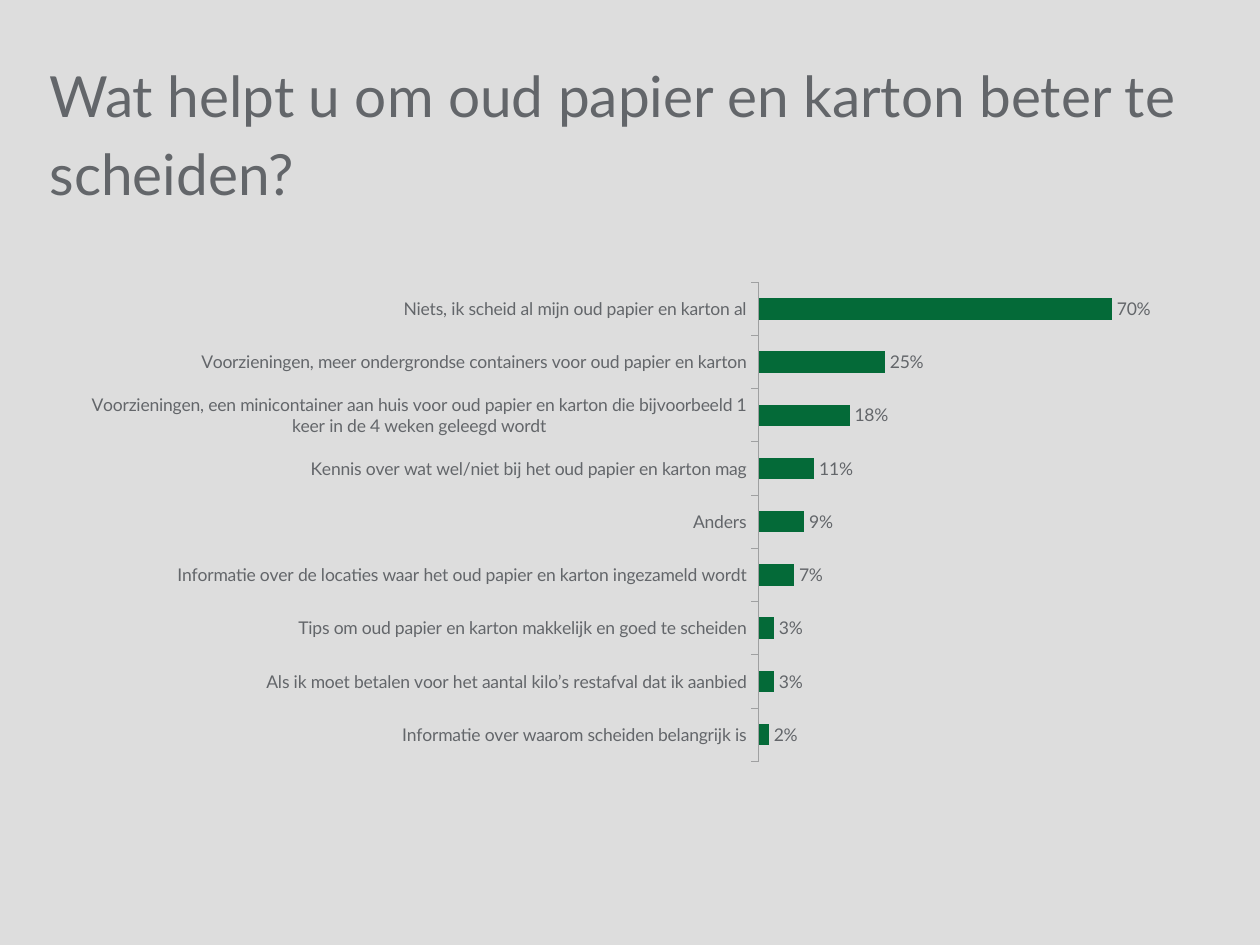
from lxml import etree
from pptx import Presentation
from pptx.chart.data import CategoryChartData
from pptx.dml.color import RGBColor
from pptx.enum.chart import XL_CHART_TYPE, XL_LABEL_POSITION, XL_TICK_LABEL_POSITION, XL_TICK_MARK
from pptx.enum.text import MSO_ANCHOR, MSO_AUTO_SIZE, PP_ALIGN
from pptx.oxml.ns import qn
from pptx.util import Cm, Pt

BAR_CLUSTERED = XL_CHART_TYPE.BAR_CLUSTERED
OUTSIDE_END = XL_LABEL_POSITION.OUTSIDE_END
LABELS_LOW = XL_TICK_LABEL_POSITION.LOW
TICK_OUTSIDE, TICK_NONE = XL_TICK_MARK.OUTSIDE, XL_TICK_MARK.NONE
TOP, LEFT, NO_AUTOFIT = MSO_ANCHOR.TOP, PP_ALIGN.LEFT, MSO_AUTO_SIZE.NONE

BACKGROUND, TEXT, BAR, AXIS = "DDDDDD", "63666A", "046A38", "9FA0A1"
TYPEFACE = "Lato"
QUESTION = "Wat helpt u om oud papier en karton beter te scheiden?"
ANSWERS = {
    "Niets, ik scheid al mijn oud papier en karton al": 0.70,
    "Voorzieningen, meer ondergrondse containers voor oud papier en karton": 0.25,
    "Voorzieningen, een minicontainer aan huis voor oud papier en karton "
    "die bijvoorbeeld 1 keer in de 4 weken geleegd wordt": 0.18,
    "Kennis over wat wel/niet bij het oud papier en karton mag": 0.11,
    "Anders": 0.09,
    "Informatie over de locaties waar het oud papier en karton ingezameld wordt": 0.07,
    "Tips om oud papier en karton makkelijk en goed te scheiden": 0.03,
    "Als ik moet betalen voor het aantal kilo’s restafval dat ik aanbied": 0.03,
    "Informatie over waarom scheiden belangrijk is": 0.02,
}
PLOT_LAYOUT = {"layoutTarget": "inner", "xMode": "edge", "yMode": "edge",
               "x": "0.615", "y": "0.02", "w": "0.36", "h": "0.96"}


def set_values(target, values):
    """Set each named attribute of the target."""
    for name, value in values.items():
        setattr(target, name, value)


def paint(fill, color):
    """Give a fill one solid colour."""
    fill.solid()
    fill.fore_color.rgb = RGBColor.from_string(color)


def style_font(font, size):
    """Apply the house typeface and text colour."""
    set_values(font, {"name": TYPEFACE, "size": Pt(size), "bold": False})
    font.color.rgb = RGBColor.from_string(TEXT)


def add_question(slide):
    """Place the question in the title placeholder."""
    title = slide.shapes.title
    set_values(title, {"left": Cm(1), "top": Cm(1), "width": Cm(23.4), "height": Cm(3)})
    frame = title.text_frame
    set_values(frame, {"margin_left": 0, "margin_top": 0, "margin_right": 0,
                       "margin_bottom": 0, "word_wrap": True,
                       "auto_size": NO_AUTOFIT, "vertical_anchor": TOP})
    frame.text = QUESTION
    paragraph = frame.paragraphs[0]
    set_values(paragraph, {"alignment": LEFT, "line_spacing": Pt(45), "space_before": Pt(0)})
    style_font(paragraph.font, 32.4)


def place_plot(chart):
    """Fix the inner plot area within the chart."""
    plot_area = chart.element.find(".//" + qn("c:plotArea"))
    for former in plot_area.findall(qn("c:layout")):
        plot_area.remove(former)
    layout = etree.Element(qn("c:layout"))
    manual = etree.SubElement(layout, qn("c:manualLayout"))
    for name, value in PLOT_LAYOUT.items():
        etree.SubElement(manual, qn("c:" + name)).set("val", value)
    plot_area.insert(0, layout)


def add_answer_chart(slide):
    """Draw the share of each answer as a bar."""
    answers = CategoryChartData(number_format="0%")
    answers.categories = list(ANSWERS)
    answers.add_series("Series 1", list(ANSWERS.values()))
    chart = slide.shapes.add_chart(
        BAR_CLUSTERED, Cm(1.4), Cm(5.49), Cm(22.6), Cm(10.06), answers).chart
    set_values(chart, {"has_legend": False, "has_title": False})
    style_font(chart.font, 10)

    answer_axis = chart.category_axis
    set_values(answer_axis, {"reverse_order": True, "tick_label_position": LABELS_LOW,
                             "major_tick_mark": TICK_OUTSIDE, "minor_tick_mark": TICK_NONE,
                             "has_major_gridlines": False})
    style_font(answer_axis.tick_labels.font, 10)
    paint(answer_axis.format.line.fill, AXIS)
    answer_axis.format.line.width = Pt(0.5)
    set_values(chart.value_axis, {"visible": False, "has_major_gridlines": False,
                                  "minimum_scale": 0, "maximum_scale": 0.8})

    bars = chart.plots[0]
    set_values(bars, {"gap_width": 150, "vary_by_categories": False, "has_data_labels": True})
    paint(bars.series[0].format.fill, BAR)
    set_values(bars.data_labels, {"show_value": True, "position": OUTSIDE_END,
                                  "number_format": "0%", "number_format_is_linked": False})
    style_font(bars.data_labels.font, 10)
    place_plot(chart)


def main():
    """Build and save the survey slide."""
    deck = Presentation()
    set_values(deck, {"slide_width": Cm(25.4), "slide_height": Cm(19.05)})
    slide = deck.slides.add_slide(deck.slide_layouts[5])
    paint(slide.background.fill, BACKGROUND)
    add_question(slide)
    add_answer_chart(slide)
    deck.save("out.pptx")


if __name__ == "__main__":
    main()
